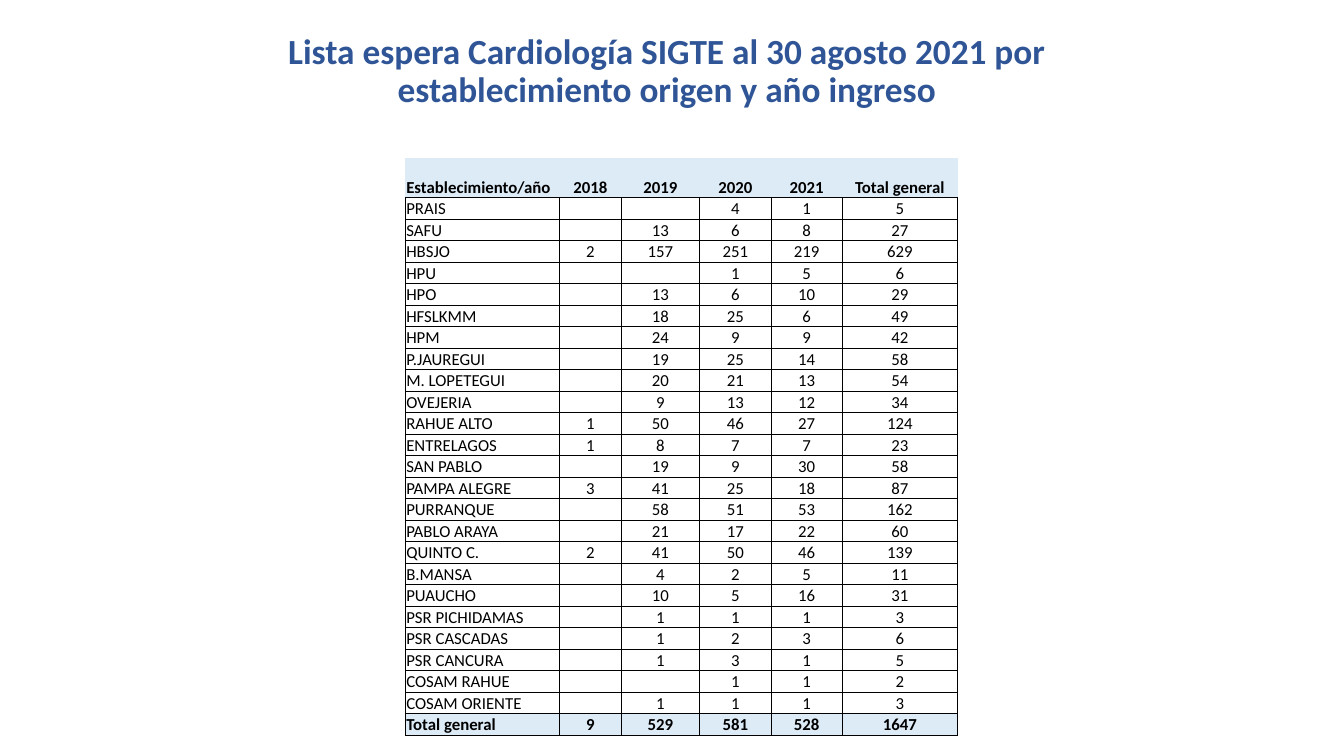
from lxml.etree import SubElement
from pptx import Presentation
from pptx.dml.color import RGBColor
from pptx.enum.text import MSO_ANCHOR, MSO_AUTO_SIZE, PP_ALIGN
from pptx.oxml.ns import qn
from pptx.util import Inches, Pt

COLORS = {"title": "2F5597", "text": "000000", "border": "000000", "band": "DDEBF7"}
TITLE = "Lista espera Cardiología SIGTE al 30 agosto 2021 por establecimiento origen y año ingreso"
COLUMN_WIDTHS = [1.53, 0.61, 0.78, 0.71, 0.7, 1.15]
HEADER = ["Establecimiento/año", 2018, 2019, 2020, 2021, "Total general"]
WAITING = [
    ["PRAIS", "", "", 4, 1, 5],
    ["SAFU", "", 13, 6, 8, 27],
    ["HBSJO", 2, 157, 251, 219, 629],
    ["HPU", "", "", 1, 5, 6],
    ["HPO", "", 13, 6, 10, 29],
    ["HFSLKMM", "", 18, 25, 6, 49],
    ["HPM", "", 24, 9, 9, 42],
    ["P.JAUREGUI", "", 19, 25, 14, 58],
    ["M. LOPETEGUI", "", 20, 21, 13, 54],
    ["OVEJERIA", "", 9, 13, 12, 34],
    ["RAHUE ALTO", 1, 50, 46, 27, 124],
    ["ENTRELAGOS", 1, 8, 7, 7, 23],
    ["SAN PABLO", "", 19, 9, 30, 58],
    ["PAMPA ALEGRE", 3, 41, 25, 18, 87],
    ["PURRANQUE", "", 58, 51, 53, 162],
    ["PABLO ARAYA", "", 21, 17, 22, 60],
    ["QUINTO C.", 2, 41, 50, 46, 139],
    ["B.MANSA", "", 4, 2, 5, 11],
    ["PUAUCHO", "", 10, 5, 16, 31],
    ["PSR PICHIDAMAS", "", 1, 1, 1, 3],
    ["PSR CASCADAS", "", 1, 2, 3, 6],
    ["PSR CANCURA", "", 1, 3, 1, 5],
    ["COSAM RAHUE", "", "", 1, 1, 2],
    ["COSAM ORIENTE", "", 1, 1, 1, 3],
]
TOTAL = ["Total general", 9, 529, 581, 528, 1647]


def set_all(target, values):
    for name, value in values.items():
        setattr(target, name, value)


class SlideBuilder:
    font = "Calibri"
    cell_size = Pt(12)
    cell_format = {
        "margin_left": Inches(0.01),
        "margin_right": Inches(0.01),
        "margin_top": Inches(0.01),
        "margin_bottom": 0,
        "vertical_anchor": MSO_ANCHOR.BOTTOM,
    }

    def __init__(self, prs):
        self.s = prs.slides.add_slide(prs.slide_layouts[5])

    def add_text(self, p, text, size, color, bold, align):
        p.alignment = align
        r = p.add_run()
        r.text = text
        set_all(r.font, {"name": self.font, "size": size, "bold": bold})
        r.font.color.rgb = RGBColor.from_string(COLORS[color])

    def title(self, text, left, top, width, height):
        sp = self.s.shapes.title
        set_all(sp, {"left": left, "top": top, "width": width, "height": height})
        tf = sp.text_frame
        set_all(tf, {"word_wrap": True, "auto_size": MSO_AUTO_SIZE.NONE,
                     "vertical_anchor": MSO_ANCHOR.MIDDLE})
        p = tf.paragraphs[0]
        p.line_spacing = 0.9
        self.add_text(p, text, Pt(25.2), "title", True, PP_ALIGN.CENTER)

    def borders(self, cell, visible):
        tc_pr = cell._tc.get_or_add_tcPr()
        for side in "LRTB":
            ln = SubElement(tc_pr, qn(f"a:ln{side}"), w=str(Pt(0.5)))
            if side in visible:
                fill = SubElement(ln, qn("a:solidFill"))
                SubElement(fill, qn("a:srgbClr"), val=COLORS["border"])
            else:
                SubElement(ln, qn("a:noFill"))

    def cell(self, cell, value, align, band, visible):
        set_all(cell, self.cell_format)
        self.borders(cell, visible)
        if band:
            cell.fill.solid()
            cell.fill.fore_color.rgb = RGBColor.from_string(COLORS["band"])
        else:
            cell.fill.background()
        p = cell.text_frame.paragraphs[0]
        if value == "":
            p._p.get_or_add_endParaRPr().set("sz", str(int(self.cell_size.pt * 100)))
        else:
            self.add_text(p, str(value), self.cell_size, "text", band, align)

    def table(self, rows, left, top, widths, header_height, row_height):
        height = header_height + row_height * (len(rows) - 1)
        frame = self.s.shapes.add_table(
            len(rows), len(widths), left, top, Inches(sum(widths)), height)
        table = frame.table
        set_all(table, {"first_row": False, "horz_banding": False})
        for column, width in zip(table.columns, widths):
            column.width = Inches(width)
        for i, values in enumerate(rows):
            table.rows[i].height = row_height if i else header_height
            band = i in (0, len(rows) - 1)
            for j, value in enumerate(values):
                align = PP_ALIGN.CENTER if j else PP_ALIGN.LEFT
                self.cell(table.cell(i, j), value, align, band, "LRTB" if i else "B")


def main():
    prs = Presentation()
    set_all(prs, {"slide_width": Inches(13.33), "slide_height": Inches(7.5)})
    slide = SlideBuilder(prs)
    slide.title(TITLE, Inches(2.21), Inches(0.29), Inches(8.81), Inches(0.85))
    slide.table([HEADER, *WAITING, TOTAL], Inches(4.02), Inches(1.57),
                COLUMN_WIDTHS, Inches(0.39), Inches(0.2))
    prs.save("out.pptx")


if __name__ == "__main__":
    main()
